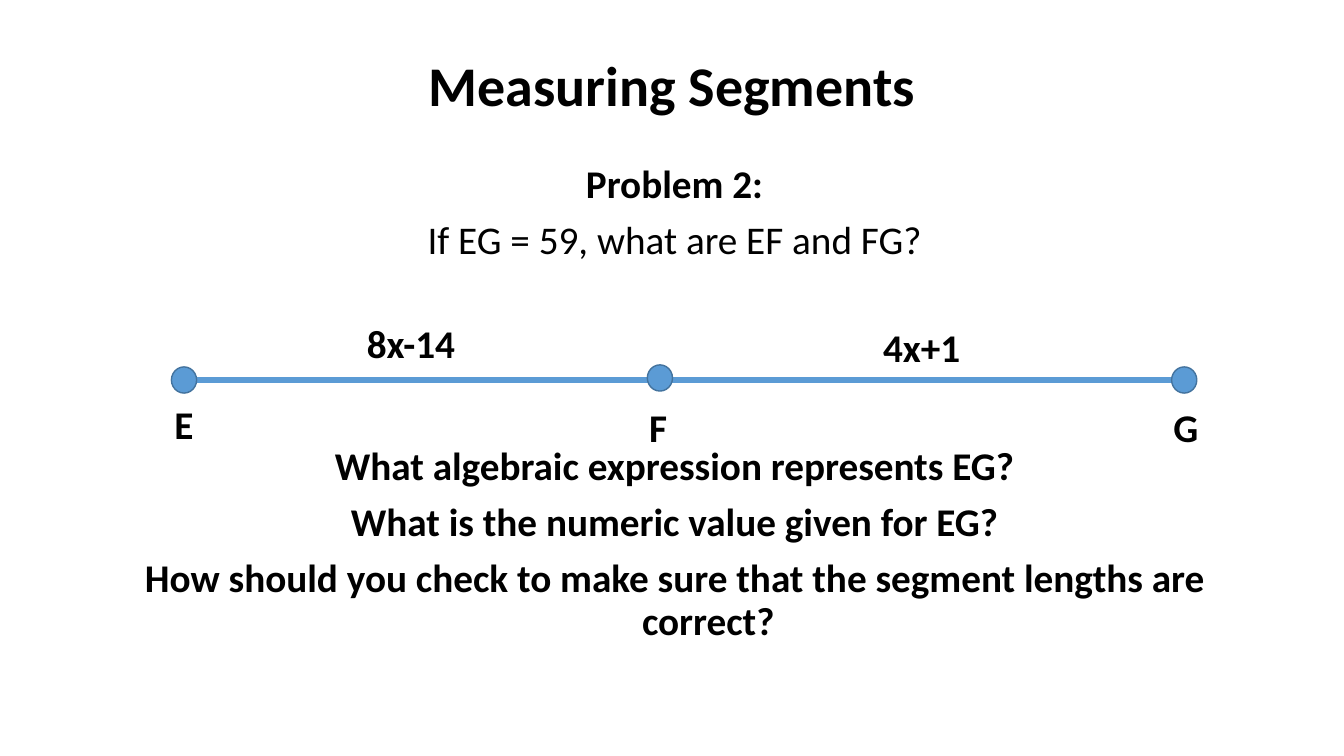
from lxml.etree import SubElement
from pptx import Presentation
from pptx.dml.color import RGBColor
from pptx.enum.shapes import MSO_CONNECTOR as Connector, MSO_SHAPE as Shape
from pptx.enum.text import MSO_ANCHOR as Anchor, PP_ALIGN as Align
from pptx.oxml.ns import qn
from pptx.util import Inches, Pt

COLORS = {"text": "000000", "segment": "5B9BD5", "outline": "43739E"}
FONT = "Calibri"
BODY_SIZE = 28
DOT_WIDTH, DOT_HEIGHT = 0.25, 0.26
LABEL_HEIGHT = 0.57

# name, dot left, dot rise above the line, label left, label drop, label width
POINTS = [
    ("E", 0, 0, -0.07, 0.28, 0.41),
    ("F", 4.72, 0.02, 4.64, 0.31, 0.39),
    ("G", 9.92, 0, 9.84, 0.31, 0.53),
]
# expression, left, drop of the label's top from the diagram's top
LENGTHS = [("8x-14", 1.84, 0), ("4x+1", 6.96, 0.04)]
LENGTH_WIDTH = 1.3

# text, bold, space before in points; the large gap leaves room for the diagram
PROBLEM = [
    ("Problem 2:", True, 10),
    ("If EG = 59, what are EF and FG?", False, 10),
    ("What algebraic expression represents EG?", True, 131),
    ("What is the numeric value given for EG?", True, 10),
    ("How should you check to make sure that the segment lengths are correct?", True, 10),
]


def color(name):
    return RGBColor.from_string(COLORS[name])


def style(paragraph, size=BODY_SIZE, bold=True):
    font = paragraph.font
    font.name, font.size, font.bold = FONT, Pt(size), bold
    font.color.rgb = color("text")


def add_box(slide, left, top, width, height, wrap=True):
    box = slide.shapes.add_textbox(*map(Inches, (left, top, width, height)))
    box.text_frame.word_wrap = wrap
    return box.text_frame


def add_title(slide, left, top, width, height):
    frame = add_box(slide, left, top, width, height)
    frame.vertical_anchor = Anchor.MIDDLE
    paragraph = frame.paragraphs[0]
    paragraph.text = "Measuring Segments"
    paragraph.alignment = Align.CENTER
    paragraph.line_spacing = 0.9
    style(paragraph, size=40)


def add_problem(slide, left, top, width, height):
    frame = add_box(slide, left, top, width, height)
    for index, (text, bold, gap) in enumerate(PROBLEM):
        paragraph = frame.add_paragraph() if index else frame.paragraphs[0]
        paragraph.text = text
        paragraph.alignment = Align.CENTER
        paragraph.line_spacing = 0.9
        paragraph.space_before = Pt(gap)
        style(paragraph, bold=bold)
        # Hanging indent
        properties = paragraph._p.get_or_add_pPr()
        properties.set("marL", str(Inches(0.67)))
        properties.set("indent", str(-Inches(0.67)))


def add_label(slide, text, left, top, width, wrap):
    paragraph = add_box(slide, left, top, width, LABEL_HEIGHT, wrap).paragraphs[0]
    paragraph.text = text
    style(paragraph)


def add_diagram(slide, left, top, line_drop):
    line_top = top + line_drop

    # Segment from the middle of E to the left side of G
    start, end = left + DOT_WIDTH / 2, left + POINTS[-1][1]
    segment = slide.shapes.add_connector(
        Connector.STRAIGHT, *map(Inches, (start, line_top, end, line_top)))
    segment.line.color.rgb = color("segment")
    segment.line.width = Pt(4)
    SubElement(segment._element.spPr, qn("a:effectLst"))

    # Points and their names
    for name, dot_left, rise, label_left, drop, label_width in POINTS:
        dot = slide.shapes.add_shape(Shape.OVAL, *map(Inches, (
            left + dot_left, line_top - DOT_HEIGHT / 2 - rise, DOT_WIDTH, DOT_HEIGHT)))
        dot.shadow.inherit = False
        dot.fill.solid()
        dot.fill.fore_color.rgb = color("segment")
        dot.line.color.rgb = color("outline")
        dot.line.width = Pt(1)
        add_label(slide, name, left + label_left, top + drop + 0.52, label_width, False)

    # Length expressions
    for expression, label_left, drop in LENGTHS:
        add_label(slide, expression, left + label_left, top + drop, LENGTH_WIDTH, True)


def main():
    presentation = Presentation()
    presentation.slide_width = Inches(13.33)
    presentation.slide_height = Inches(7.5)
    slide = presentation.slides.add_slide(presentation.slide_layouts[6])
    add_title(slide, 1.83, 0.17, 9.67, 1.42)
    add_problem(slide, 0.76, 1.58, 11.86, 5.67)
    add_diagram(slide, 1.7, 3.12, 0.65)
    presentation.save("out.pptx")


if __name__ == "__main__":
    main()
